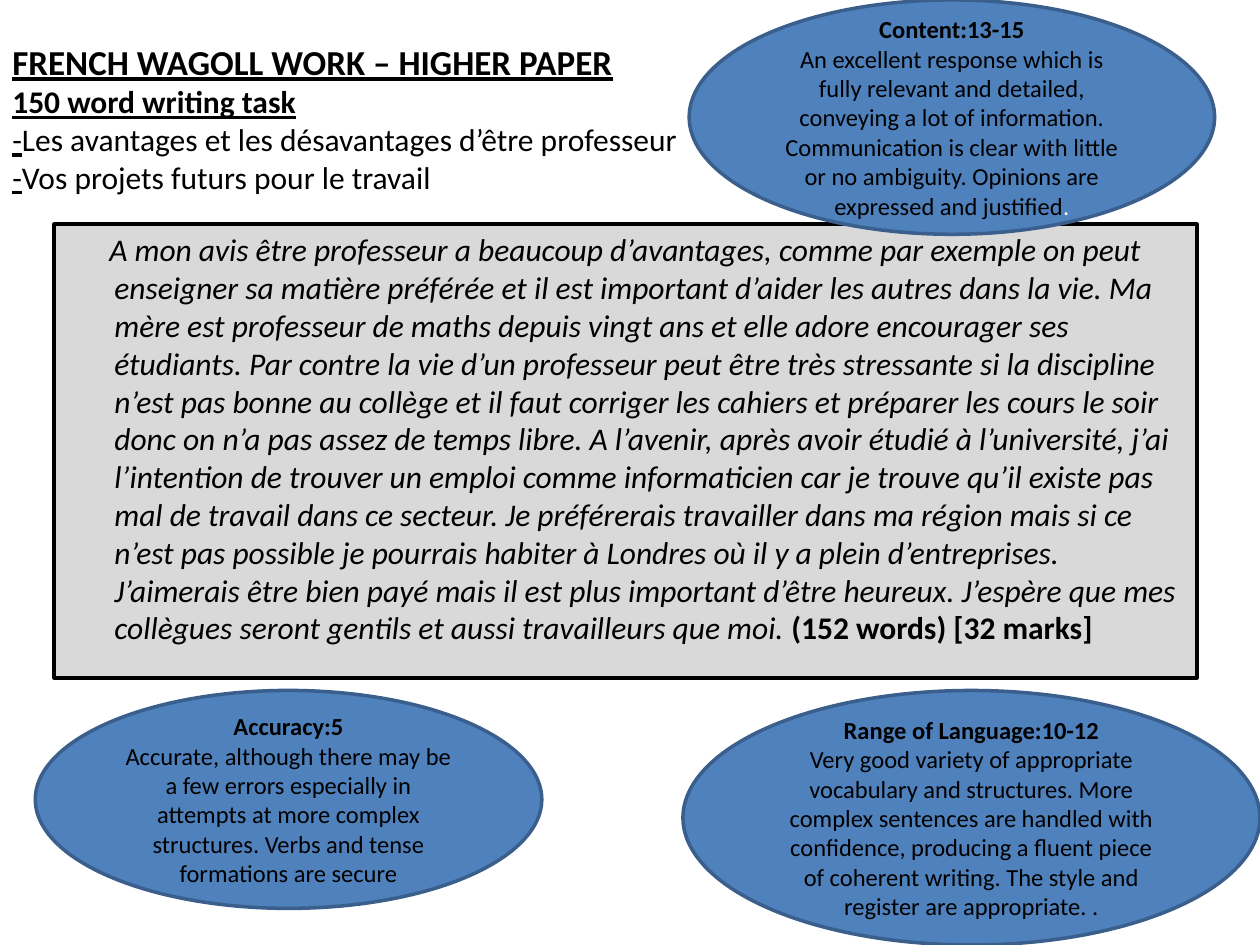
import pptx
import pptx.dml.color
import pptx.enum.shapes
import pptx.enum.text
import pptx.util

Inches, Pt = pptx.util.Inches, pptx.util.Pt
SHAPE = pptx.enum.shapes.MSO_SHAPE
ALIGN = pptx.enum.text.PP_ALIGN
ANCHOR = pptx.enum.text.MSO_ANCHOR
W, H = 10, 7.5


def rgb(value):
    return pptx.dml.color.RGBColor.from_string(value)


def add_block(kind, box, fill, line, anchor, align, paragraphs):
    """Add a shape, or a text box if kind is None; runs are (text, size, style, colour)
    where style holds any of the letters b, i and u."""
    left, top, width, height = box
    place = [Inches(v) for v in (left * W, top * H, width * W, height * H)]
    if kind is None:
        s = slide.shapes.add_textbox(*place)
    else:
        s = slide.shapes.add_shape(kind, *place)
        s.shadow.inherit = False
        s.fill.solid()
        s.fill.fore_color.rgb = rgb(fill)
        s.line.color.rgb = rgb(line)
        s.line.width = Pt(2)
    tf = s.text_frame
    tf.word_wrap = True
    tf.vertical_anchor = anchor
    for n, runs in enumerate(paragraphs):
        p = tf.paragraphs[0] if n == 0 else tf.add_paragraph()
        p.alignment = align
        for text, size, style, colour in runs:
            r = p.add_run()
            r.text = text
            r.font.name = "Calibri"
            r.font.size = Pt(size)
            r.font.bold = "b" in style
            r.font.italic = "i" in style
            r.font.underline = "u" in style
            r.font.color.rgb = rgb(colour)
    return s


prs = pptx.Presentation()
prs.slide_width, prs.slide_height = Inches(W), Inches(H)
slide = prs.slides.add_slide(prs.slide_layouts[6])

# Task heading
topics = ["Les avantages et les désavantages d’être professeur",
          "Vos projets futurs pour le travail"]
heading = [[("FRENCH WAGOLL WORK – HIGHER PAPER", 20, "bu", "000000")],
           [("150 word writing task", 18, "bu", "000000")]]
heading += [[("-", 18, "u", "000000"), (topic, 18, "", "000000")] for topic in topics]
add_block(None, (0, 0.03, 0.59, 0.19), None, None, ANCHOR.MIDDLE, ALIGN.LEFT, heading)

# Model answer, one sentence per item
sentences = [
    "A mon avis être professeur a beaucoup d’avantages, comme par exemple on peut "
    "enseigner sa matière préférée et il est important d’aider les autres dans la vie.",
    "Ma mère est professeur de maths depuis vingt ans et elle adore encourager ses "
    "étudiants.",
    "Par contre la vie d’un professeur peut être très stressante si la discipline "
    "n’est pas bonne au collège et il faut corriger les cahiers et préparer les cours "
    "le soir donc on n’a pas assez de temps libre.",
    "A l’avenir, après avoir étudié à l’université, j’ai l’intention de trouver un "
    "emploi comme informaticien car je trouve qu’il existe pas mal de travail dans ce "
    "secteur.",
    "Je préférerais travailler dans ma région mais si ce n’est pas possible je "
    "pourrais habiter à Londres où il y a plein d’entreprises.",
    "J’aimerais être bien payé mais il est plus important d’être heureux.",
    "J’espère que mes collègues seront gentils et aussi travailleurs que moi. ",
]
s = add_block(SHAPE.RECTANGLE, (0.043, 1.78 / H, 0.907, 0.48), "D9D9D9", "000000",
              ANCHOR.TOP, ALIGN.LEFT,
              [[(" ".join(sentences), 18, "i", "000000"),
                ("(152 words) [32 marks]", 18, "b", "000000")]])
pPr = s.text_frame.paragraphs[0]._p.get_or_add_pPr()
pPr.set("marL", str(Inches(0.38)))
pPr.set("indent", str(Inches(-0.04)))

# Mark scheme bubbles
lower = 5.48 / H
bubbles = [
    ((0.028, lower, 0.402, 1.73 / H), "Accuracy:5",
     "Accurate, although there may be a few errors especially in attempts at more "
     "complex structures. Verbs and tense formations are secure", ""),
    ((0.547, 0, 0.417, 1.86 / H), "Content:13-15",
     "An excellent response which is fully relevant and detailed, conveying a lot of "
     "information. Communication is clear with little or no ambiguity. Opinions are "
     "expressed and justified", "."),
    ((0.542, lower, 0.458, 1 - lower), "Range of Language:10-12",
     "Very good variety of appropriate vocabulary and structures. More complex "
     "sentences are handled with confidence, producing a fluent piece of coherent "
     "writing. The style and register are appropriate. .", ""),
]
for box, title, text, white_end in bubbles:
    body = [(text, 14, "", "000000")]
    if white_end:
        body.append((white_end, 14, "", "FFFFFF"))
    add_block(SHAPE.OVAL, box, "4F81BD", "3A5F8C", ANCHOR.MIDDLE, ALIGN.CENTER,
              [[(title, 14, "b", "000000")], body])

prs.save("out.pptx")
